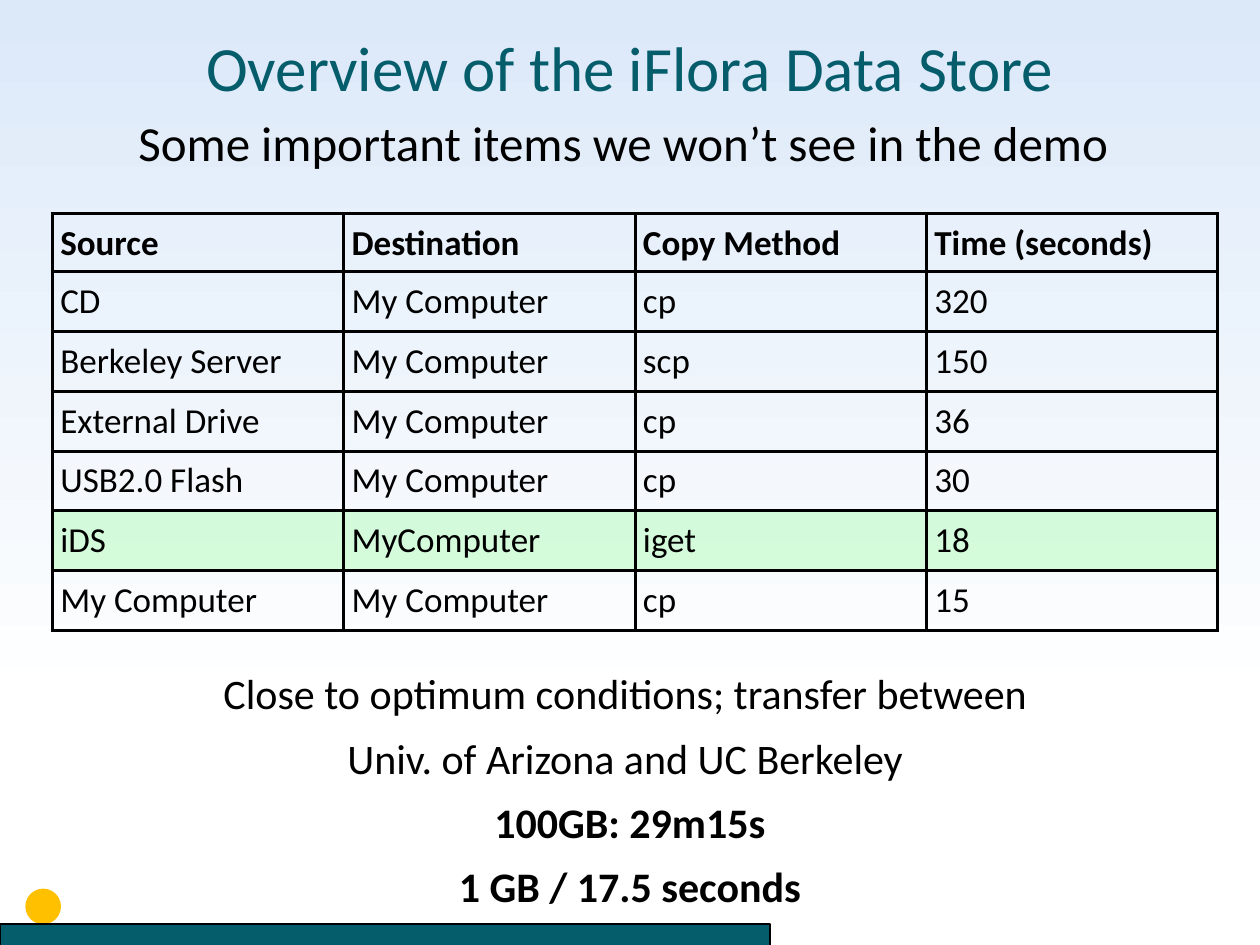
from lxml.etree import SubElement
from pptx import Presentation
from pptx.dml.color import RGBColor
from pptx.enum.shapes import MSO_SHAPE as Shape
from pptx.enum.text import MSO_ANCHOR as Anchor, PP_ALIGN as Align
from pptx.oxml import parse_xml
from pptx.oxml.ns import nsdecls, qn
from pptx.util import Pt

COLORS = {
    "sky": "DCE9F9", "white": "FFFFFF", "teal": "055C6B",
    "amber": "FFC000", "black": "000000", "green": "00FF00",
}
FONT = "Calibri"
TITLE = "Overview of the iFlora Data Store"
SUBTITLE = "Some important items we won’t see in the demo"
TRANSFERS = [
    ("Source", "Destination", "Copy Method", "Time (seconds)"),
    ("CD", "My Computer", "cp", "320"),
    ("Berkeley Server", "My Computer", "scp", "150"),
    ("External Drive", "My Computer", "cp", "36"),
    ("USB2.0 Flash", "My Computer", "cp", "30"),
    ("iDS", "MyComputer", "iget", "18"),
    ("My Computer", "My Computer", "cp", "15"),
]
HIGHLIGHT = "iDS"
HIGHLIGHT_ALPHA = 14
CONCLUSION = [  # text, bold
    ("Close to optimum conditions; transfer between ", False),
    ("Univ. of Arizona and UC Berkeley ", False),
    ("100GB: 29m15s", True),
    ("1 GB / 17.5 seconds", True),
]
TABLE_LEFT, TABLE_TOP = 30, 122.2
COLUMN_WIDTH, HEADER_HEIGHT, ROW_HEIGHT = 166.5, 32.6, 34.2
CELL_INSET, BORDER = 4.5, 2


def rgb(name):
    return RGBColor.from_string(COLORS[name])


def style(paragraph, size, color="black", bold=False):
    font = paragraph.font
    font.name, font.size, font.bold = FONT, Pt(size), bold
    font.color.rgb = rgb(color)


def add_lines(slide, box, lines, size, color="black", align=Align.CENTER,
              gap=0, wrap=True):
    frame = slide.shapes.add_textbox(*map(Pt, box)).text_frame
    frame.word_wrap = wrap
    for i, (text, bold) in enumerate(lines):
        paragraph = frame.add_paragraph() if i else frame.paragraphs[0]
        paragraph.text = text
        paragraph.alignment = align
        if i:
            paragraph.space_before = Pt(gap)
        style(paragraph, size, color, bold)


def add_solid(slide, kind, box, fill, line, weight):
    shape = slide.shapes.add_shape(kind, *map(Pt, box))
    shape.shadow.inherit = False
    shape.fill.solid()
    shape.fill.fore_color.rgb = rgb(fill)
    shape.line.color.rgb = rgb(line)
    shape.line.width = Pt(weight)


def add_borders(cell):
    properties = cell._tc.get_or_add_tcPr()
    for i, side in enumerate(("lnL", "lnR", "lnT", "lnB")):
        properties.insert(i, parse_xml(
            f'<a:{side} {nsdecls("a")} w="{Pt(BORDER)}"><a:solidFill>'
            f'<a:srgbClr val="{COLORS["black"]}"/></a:solidFill></a:{side}>'))


def fill_highlight(cell):
    cell.fill.solid()
    cell.fill.fore_color.rgb = rgb("green")
    color = cell._tc.tcPr.find(".//" + qn("a:srgbClr"))
    SubElement(color, qn("a:alpha")).set("val", str(HIGHLIGHT_ALPHA * 1000))


def add_transfers(slide):
    rows, columns = len(TRANSFERS), len(TRANSFERS[0])
    heights = [HEADER_HEIGHT] + [ROW_HEIGHT] * (rows - 1)
    table = slide.shapes.add_table(
        rows, columns, Pt(TABLE_LEFT), Pt(TABLE_TOP),
        Pt(COLUMN_WIDTH * columns), Pt(sum(heights))).table
    table.horz_banding = False
    for column in table.columns:
        column.width = Pt(COLUMN_WIDTH)
    for r, record in enumerate(TRANSFERS):
        table.rows[r].height = Pt(heights[r])
        for c, text in enumerate(record):
            cell = table.cell(r, c)
            cell.text = text
            cell.vertical_anchor = Anchor.MIDDLE
            cell.margin_left = cell.margin_right = Pt(CELL_INSET)
            cell.margin_top = cell.margin_bottom = Pt(CELL_INSET)
            style(cell.text_frame.paragraphs[0], 20, bold=r == 0)
            if record[0] == HIGHLIGHT:
                fill_highlight(cell)
            else:
                cell.fill.background()
            add_borders(cell)


def paint_background(slide):
    fill = slide.background.fill
    fill.gradient()
    fill.gradient_angle = 270
    for stop, color, position in zip(fill.gradient_stops, ("sky", "white"), (0, 0.75)):
        stop.color.rgb = rgb(color)
        stop.position = position


def main():
    deck = Presentation()
    deck.slide_width, deck.slide_height = Pt(720), Pt(540)
    slide = deck.slides.add_slide(deck.slide_layouts[6])
    paint_background(slide)
    add_solid(slide, Shape.OVAL, (15, 508.3, 19.4, 19.4), "amber", "amber", 1)
    add_lines(slide, (0, 13, 720, 89), [(TITLE, False)], 36, "teal")
    add_lines(slide, (72, 60.5, 574.5, 41), [(SUBTITLE, False)], 28,
              align=Align.LEFT, wrap=False)
    add_transfers(slide)
    add_lines(slide, (0, 378, 720, 93), CONCLUSION, 24, gap=8)
    add_solid(slide, Shape.RECTANGLE, (0, 528, 440, 18), "teal", "black", 0.75)
    deck.save("out.pptx")


if __name__ == "__main__":
    main()
